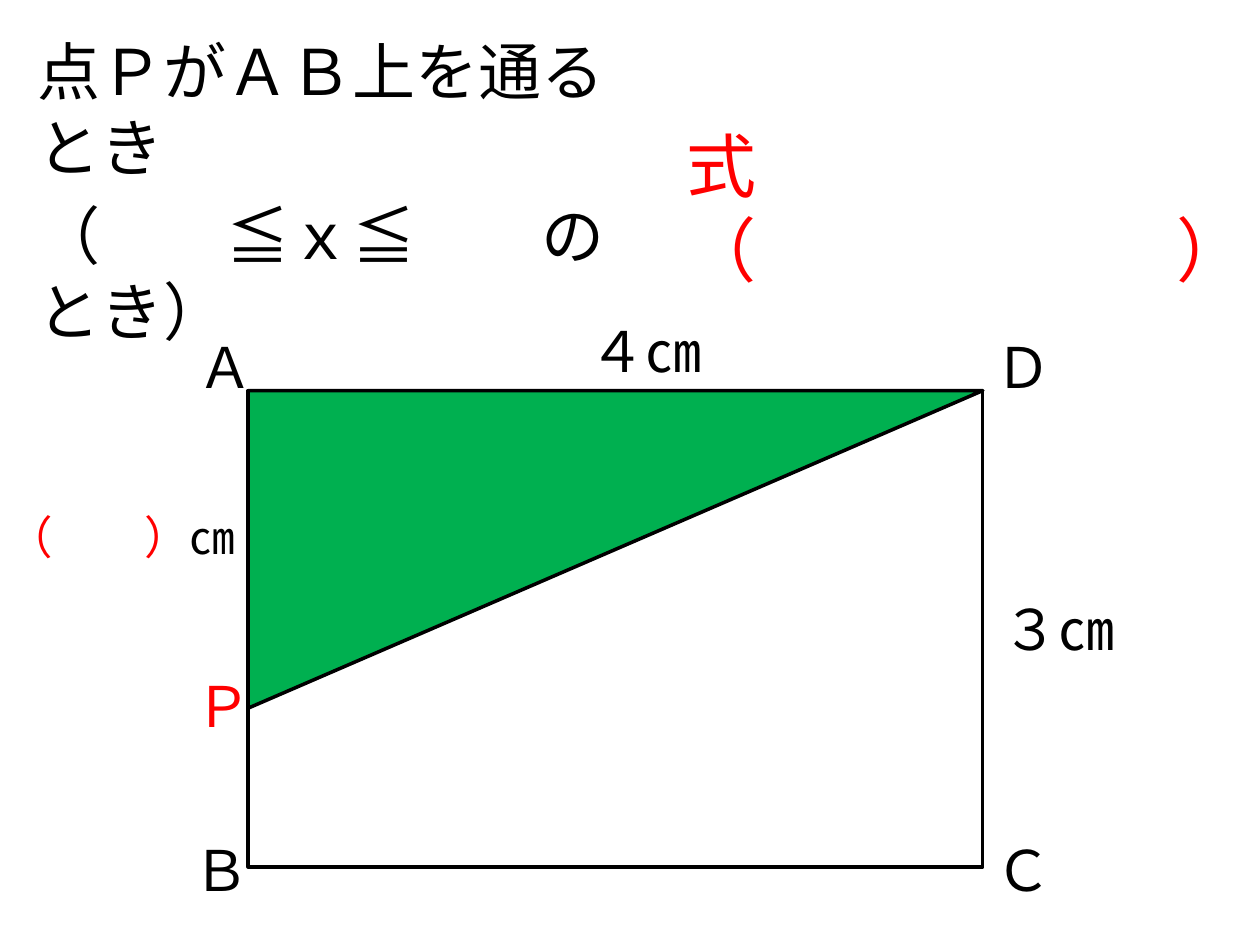
from pptx import Presentation
from pptx.dml.color import RGBColor
from pptx.enum.shapes import MSO_SHAPE as Shape
from pptx.enum.text import MSO_AUTO_SIZE as AutoSize
from pptx.oxml.ns import qn
from pptx.util import Inches, Pt

BLACK, RED, GREEN = "000000", "FF0000", "00B050"
FONT = "Calibri"


def color(hex_value):
    return RGBColor.from_string(hex_value)


def add_run(paragraph, text, size, hex_value):
    run = paragraph.add_run()
    run.text = text
    formats = {"name": FONT, "size": Pt(size)}
    for key, value in formats.items():
        setattr(run.font, key, value)
    run.font.color.rgb = color(hex_value)


def add_label(slide, box, runs, size=32, **frame_formats):
    """Place a one-line label; runs are (text, colour) pairs."""
    frame = slide.shapes.add_textbox(*map(Inches, box)).text_frame
    formats = {"word_wrap": False, "auto_size": AutoSize.SHAPE_TO_FIT_TEXT}
    for key, value in (formats | frame_formats).items():
        setattr(frame, key, value)
    for text, hex_value in runs:
        add_run(frame.paragraphs[0], text, size, hex_value)


def add_wide_label(slide, box, runs, size=32):
    """Place a label whose box is as wide as its full-width characters."""
    add_label(slide, box, runs, size,
              word_wrap=True, margin_left=0, margin_right=0)


def add_outline(slide, kind, box, fill=None):
    shape = slide.shapes.add_shape(kind, *map(Inches, box))
    shape.shadow.inherit = False
    if fill:
        shape.fill.solid()
        shape.fill.fore_color.rgb = color(fill)
    else:
        shape.fill.background()
    shape.line.color.rgb = color(BLACK)
    shape.line.width = Pt(2)
    return shape


def add_condition(slide, box):
    """Fill the body placeholder with the range of x."""
    body = slide.placeholders[1]
    for key, value in zip(("left", "top", "width", "height"), box):
        setattr(body, key, Inches(value))
    frame = body.text_frame
    lines = ("点ＰがＡＢ上を通るとき", "（　　≦ｘ≦　　のとき）")
    for index, line in enumerate(lines):
        paragraph = frame.add_paragraph() if index else frame.paragraphs[0]
        add_run(paragraph, line, 36, BLACK)
        # No bullet and no hanging indent
        properties = paragraph._p.get_or_add_pPr()
        properties.set("marL", "0")
        properties.set("indent", "0")
        properties.append(properties.makeelement(qn("a:buNone"), {}))


def add_figure(slide, box, ap):
    """Draw rectangle ABCD and triangle APD, with AP of the given length."""
    left, top, width, height = box
    add_outline(slide, Shape.RECTANGLE, box)

    # Triangle APD: a quarter turn about its centre
    center_x, center_y = left + width / 2, top + ap / 2
    triangle = add_outline(
        slide, Shape.RIGHT_TRIANGLE,
        (center_x - ap / 2, center_y - width / 2, ap, width), GREEN)
    triangle.rotation = 90

    # Points
    west, east = left - 0.52, left + width
    north, south = top - 0.51, top + height - 0.3
    points = (
        ("Ａ", west + 0.02, north, BLACK),
        ("Ｐ", west, top + ap - 0.34, RED),
        ("Ｄ", east, north, BLACK),
        ("Ｃ", east, south, BLACK),
        ("Ｂ", west - 0.01, south, BLACK),
    )
    for name, x, y, hex_value in points:
        add_label(slide, (x, y, 0.54, 0.64), [(name, hex_value)])

    # Side lengths
    add_wide_label(slide, (left + 2.71, top - 0.64, 1, 0.64),
                   [("４㎝", BLACK)])
    add_wide_label(slide, (east + 0.16, top + 1.57, 1, 0.64),
                   [("３㎝", BLACK)])
    add_wide_label(slide, (left - 1.91, top + 0.89, 1.87, 0.64),
                   [("（　　）", RED), ("㎝", BLACK)], 26)


def main():
    prs = Presentation()
    prs.slide_width, prs.slide_height = Inches(10), Inches(7.5)
    slide = prs.slides.add_slide(prs.slide_layouts[1])
    title = slide.shapes.title.element
    title.getparent().remove(title)

    add_figure(slide, (1.97, 3.1, 5.83, 3.78), 2.52)
    add_condition(slide, (0.2, 0.21, 5.04, 1.65))
    # Formula
    add_wide_label(slide, (5.45, 0.92, 4.5, 0.84),
                   [("式（　　　　　　）", RED)], 40)
    prs.save("out.pptx")


if __name__ == "__main__":
    main()
